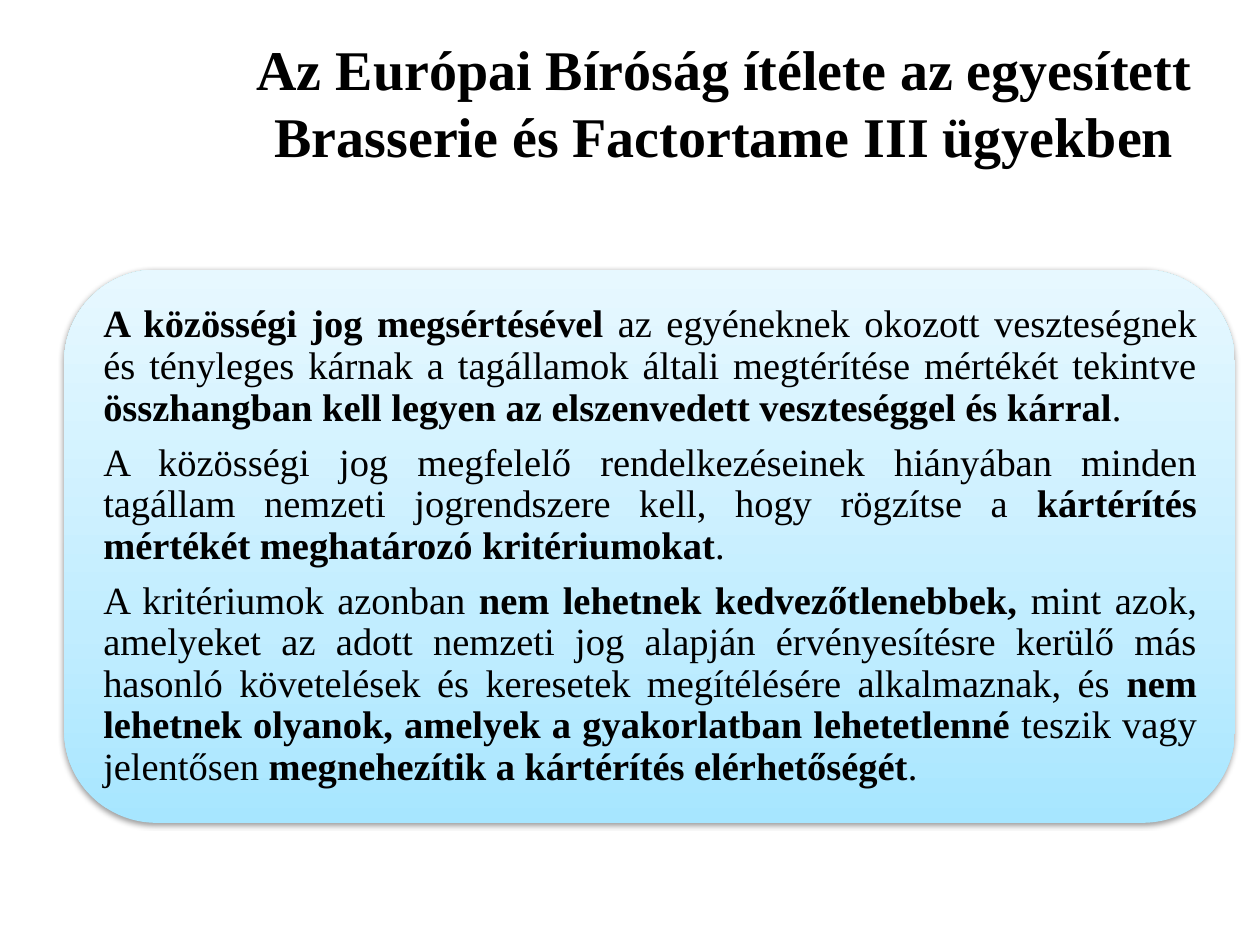
from lxml import etree
from pptx import Presentation
from pptx import util as u
from pptx.dml.color import RGBColor
from pptx.enum import shapes, text
from pptx.oxml.ns import qn

BLACK = RGBColor(0x00, 0x00, 0x00)
PANEL_STOPS = [
    (0, RGBColor(0xA7, 0xE6, 0xFF)),
    (35, RGBColor(0xC1, 0xED, 0xFF)),
    (100, RGBColor(0xE7, 0xF8, 0xFF)),
]
FONT = "Times New Roman"

TITLE = [("Az Európai Bíróság ítélete az egyesített Brasserie és Factortame III ügyekben", True)]
JUDGMENT = [
    [
        ("A közösségi jog megsértésével ", True),
        ("az egyéneknek okozott veszteségnek és tényleges kárnak a tagállamok "
         "általi megtérítése mértékét tekintve ", False),
        ("összhangban kell legyen az elszenvedett veszteséggel és kárral", True),
        (".", False),
    ],
    [
        ("A közösségi jog megfelelő rendelkezéseinek hiányában minden tagállam "
         "nemzeti jogrendszere kell, hogy rögzítse a ", False),
        ("kártérítés mértékét meghatározó kritériumokat", True),
        (". ", False),
    ],
    [
        ("A kritériumok azonban ", False),
        ("nem lehetnek kedvezőtlenebbek, ", True),
        ("mint azok, amelyeket az adott nemzeti jog alapján érvényesítésre kerülő "
         "más hasonló követelések és keresetek megítélésére alkalmaznak, és ", False),
        ("nem lehetnek olyanok, amelyek a gyakorlatban lehetetlenné", True),
        (" teszik vagy jelentősen ", False),
        ("megnehezítik a kártérítés elérhetőségét", True),
        (".", False),
    ],
]


def add_color(parent, color, **attrs):
    clr = etree.SubElement(parent, qn("a:srgbClr"), val=str(color))
    for name, value in attrs.items():
        etree.SubElement(clr, qn(f"a:{name}"), val=str(value))


def set_gradient(sp, stops, angle):
    sp.fill.gradient()
    sp.fill.gradient_angle = angle
    gs_list = sp._element.spPr.find(f".//{qn('a:gsLst')}")
    for gs in list(gs_list):
        gs_list.remove(gs)
    for pos, color in stops:
        gs = etree.SubElement(gs_list, qn("a:gs"), pos=str(pos * 1000))
        add_color(gs, color)


def set_shadow(sp, blur, dist, opacity):
    sp.shadow.inherit = False
    effects = sp._element.spPr.find(qn("a:effectLst"))
    shadow = etree.SubElement(
        effects, qn("a:outerShdw"), blurRad=str(u.Pt(blur)), dist=str(u.Pt(dist)),
        dir="5400000", rotWithShape="0")
    add_color(shadow, BLACK, alpha=opacity * 1000)


def add_panel(s, left, top, width, height):
    sp = s.shapes.add_shape(
        shapes.MSO_SHAPE.ROUNDED_RECTANGLE,
        u.Inches(left), u.Inches(top), u.Inches(width), u.Inches(height))
    set_gradient(sp, PANEL_STOPS, 90)
    sp.line.fill.background()
    set_shadow(sp, 3.1, 1.6, 38)


def add_text(s, left, top, width, height, paragraphs, size, align,
             inset=None, line_spacing=None, space_after=None):
    box = s.shapes.add_textbox(
        u.Inches(left), u.Inches(top), u.Inches(width), u.Inches(height))
    tf = box.text_frame
    tf.word_wrap = True
    tf.vertical_anchor = text.MSO_ANCHOR.MIDDLE
    if inset is not None:
        tf.margin_left = tf.margin_right = u.Inches(inset)
        tf.margin_top = tf.margin_bottom = u.Inches(inset)
    for i, runs in enumerate(paragraphs):
        p = tf.add_paragraph() if i else tf.paragraphs[0]
        p.alignment = align
        p.line_spacing = line_spacing
        p.space_after = space_after
        for content, bold in runs:
            r = p.add_run()
            r.text = content
            r.font.name = FONT
            r.font.size = u.Pt(size)
            r.font.bold = bold
            r.font.color.rgb = BLACK


def main():
    prs = Presentation()
    prs.slide_width = u.Inches(10)
    prs.slide_height = u.Inches(7.5)
    s = prs.slides.add_slide(prs.slide_layouts[6])
    add_text(s, 1.5, 0, 8.5, 1.61, [TITLE], 32, text.PP_ALIGN.CENTER)
    add_panel(s, 0.51, 2.14, 9.29, 4.39)
    add_text(s, 0.73, 2.36, 8.86, 3.96, JUDGMENT, 22, text.PP_ALIGN.JUSTIFY,
             inset=0.09, line_spacing=0.9, space_after=u.Pt(7.7))
    prs.save("out.pptx")


if __name__ == "__main__":
    main()
